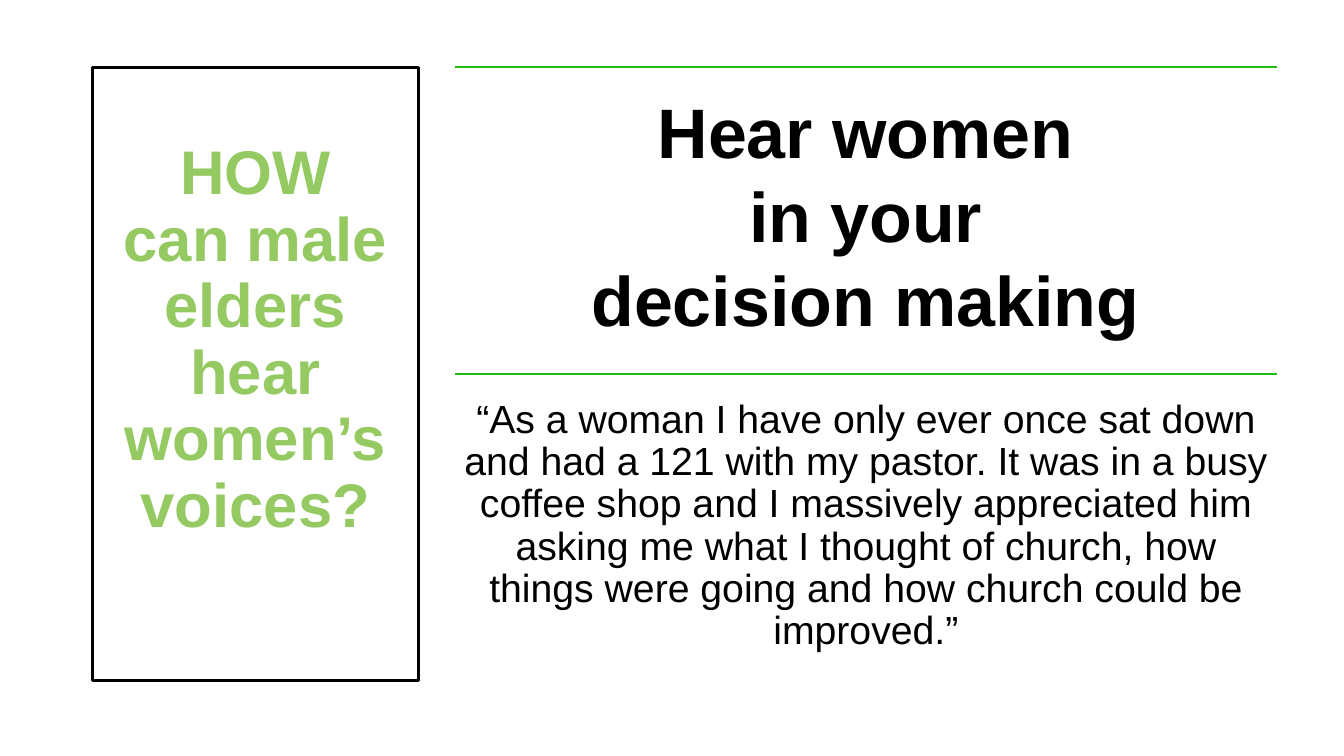
from pptx import Presentation
from pptx.dml.color import RGBColor
from pptx.enum.shapes import MSO_CONNECTOR, MSO_SHAPE
from pptx.enum.text import MSO_ANCHOR, PP_ALIGN
from pptx.oxml.ns import qn
from pptx.util import Pt
from lxml.etree import SubElement

BLACK = RGBColor(0x00, 0x00, 0x00)
RULE_GREEN = RGBColor(0x1F, 0xBC, 0x14)
QUESTION_GREEN = RGBColor(0x95, 0xCA, 0x63)

QUESTION = ["HOW", "can male elders hear women’s voices?"]
HEADING = ["Hear women", "in your", "decision making"]
QUOTE = [
    "“As a woman I have only ever once sat down and had a 121 with my pastor. "
    "It was in a busy coffee shop and I massively appreciated him asking me "
    "what I thought of church, how things were going and how church could be "
    "improved.”"
]


def write(frame, lines, size, color, bold, spacing, anchor, margins):
    left, top, right, bottom = map(Pt, margins)
    settings = {
        "word_wrap": True,
        "vertical_anchor": anchor,
        "margin_left": left,
        "margin_top": top,
        "margin_right": right,
        "margin_bottom": bottom,
    }
    for name, value in settings.items():
        setattr(frame, name, value)
    for index, line in enumerate(lines):
        paragraph = frame.paragraphs[0] if index == 0 else frame.add_paragraph()
        paragraph.alignment = PP_ALIGN.CENTER
        paragraph.line_spacing = spacing
        run = paragraph.add_run()
        run.text = line
        run.font.color.rgb = color
        for name, value in {"name": "Arial", "size": Pt(size), "bold": bold}.items():
            setattr(run.font, name, value)


def add_question_panel(slide, left, top, width, height):
    panel = slide.shapes.add_shape(
        MSO_SHAPE.RECTANGLE, Pt(left), Pt(top), Pt(width), Pt(height)
    )
    panel.shadow.inherit = False
    panel.fill.background()
    panel.line.color.rgb = BLACK
    panel.line.width = Pt(2.25)
    write(panel.text_frame, QUESTION, 44, QUESTION_GREEN, True, 0.9,
          MSO_ANCHOR.MIDDLE, (7.2, 3.6, 7.2, 51))


def add_ruled_text(slide, left, top, width, height, lines, **style):
    rule = slide.shapes.add_connector(
        MSO_CONNECTOR.STRAIGHT, Pt(left), Pt(top), Pt(left + width), Pt(top)
    )
    rule.line.color.rgb = RULE_GREEN
    rule.line.width = Pt(1)
    SubElement(rule.element.spPr, qn("a:effectLst"))
    passage = slide.shapes.add_textbox(Pt(left), Pt(top), Pt(width), Pt(height))
    write(passage.text_frame, lines, color=BLACK, anchor=MSO_ANCHOR.TOP, **style)


def add_message_column(slide, left, top, width, height):
    half = height / 2
    add_ruled_text(slide, left, top, width, half, HEADING,
                   size=50, bold=True, spacing=1.0, margins=(15, 15, 15, 15))
    add_ruled_text(slide, left, top + half, width, half, QUOTE,
                   size=28, bold=False, spacing=0.9, margins=(3, 18, 3, 3))


def main():
    deck = Presentation()
    deck.slide_width, deck.slide_height = Pt(960), Pt(540)
    slide = deck.slides.add_slide(deck.slide_layouts[6])
    add_message_column(slide, left=324.7, top=48, width=587.5, height=438.4)
    add_question_panel(slide, left=66.2, top=48, width=232.6, height=438.4)
    deck.save("out.pptx")


if __name__ == "__main__":
    main()
